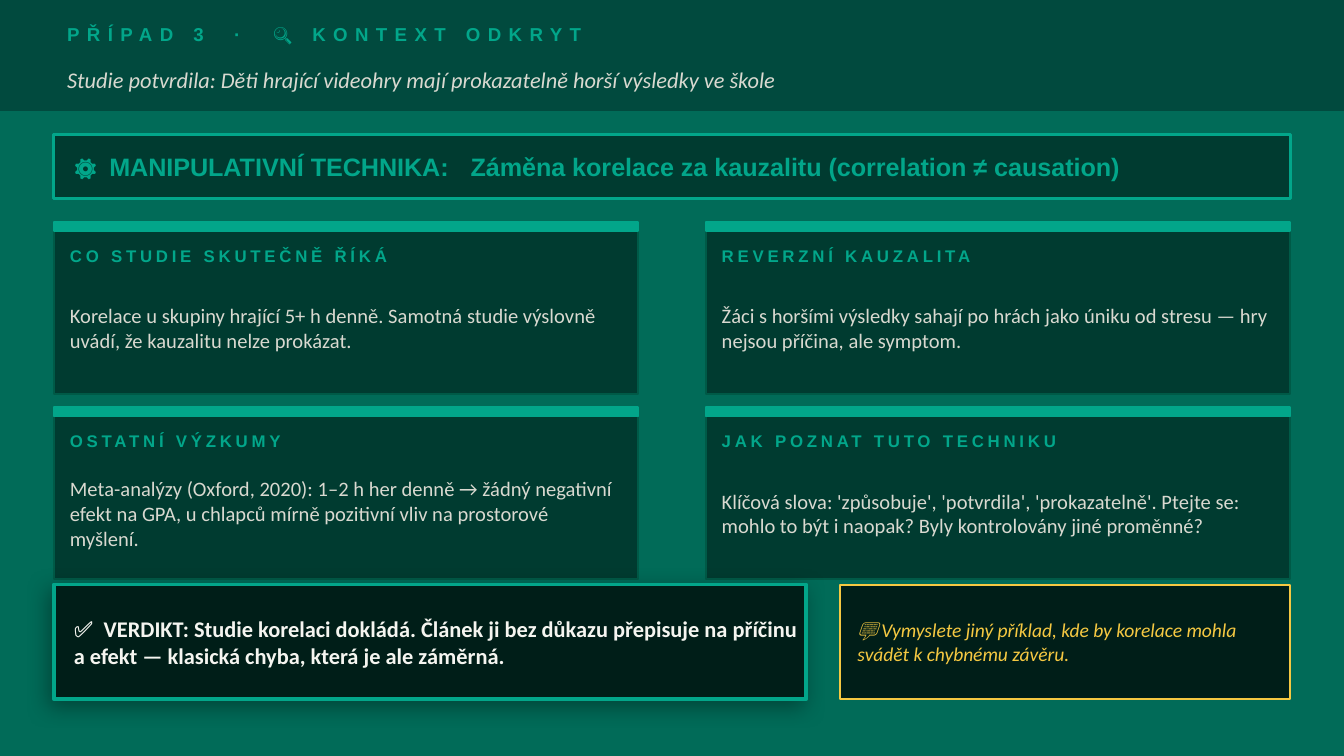
from dataclasses import dataclass
from typing import Optional

import pptx
import pptx.dml.color
import pptx.enum.shapes
import pptx.enum.text
import pptx.oxml
import pptx.oxml.ns
import pptx.util
from pptx.dml.color import RGBColor
from pptx.util import Pt

BACKGROUND = RGBColor(0x01, 0x6B, 0x58)
HEADER = RGBColor(0x01, 0x4A, 0x3E)
PANEL = RGBColor(0x00, 0x3B, 0x30)
PANEL_EDGE = RGBColor(0x00, 0x5A, 0x47)
DARK = RGBColor(0x00, 0x1E, 0x18)
ACCENT = RGBColor(0x02, 0xA6, 0x8A)
YELLOW = RGBColor(0xF5, 0xC8, 0x42)
BODY = RGBColor(0xD9, 0xD9, 0xD0)
WHITE = RGBColor(0xF5, 0xF5, 0xF0)

NS = pptx.oxml.ns.nsdecls("a")


@dataclass(frozen=True)
class Box:
    x: float
    y: float
    w: float
    h: float


@dataclass(frozen=True)
class Style:
    font: str
    size: float
    color: RGBColor
    bold: bool = False
    italic: bool = False
    spacing: int = 0


@dataclass(frozen=True)
class Card:
    title: str
    body: str


CASE = Style("Arial", 10, ACCENT, bold=True, spacing=4)
HEADLINE = Style("Calibri", 12, BODY, italic=True)
TECHNIQUE = Style("Arial", 13.5, ACCENT, bold=True)
CARD_TITLE = Style("Arial", 9, ACCENT, bold=True, spacing=2)
CARD_BODY = Style("Calibri", 11, BODY)
VERDICT = Style("Calibri", 12, WHITE, bold=True)
TASK = Style("Calibri", 10.5, YELLOW, italic=True)

CARDS = [
    Card("CO STUDIE SKUTEČNĚ ŘÍKÁ",
         "Korelace u skupiny hrající 5+ h denně. Samotná studie výslovně "
         "uvádí, že kauzalitu nelze prokázat."),
    Card("REVERZNÍ KAUZALITA",
         "Žáci s horšími výsledky sahají po hrách jako úniku od stresu — "
         "hry nejsou příčina, ale symptom."),
    Card("OSTATNÍ VÝZKUMY",
         "Meta-analýzy (Oxford, 2020): 1–2 h her denně → žádný negativní "
         "efekt na GPA, u chlapců mírně pozitivní vliv na prostorové myšlení."),
    Card("JAK POZNAT TUTO TECHNIKU",
         "Klíčová slova: 'způsobuje', 'potvrdila', 'prokazatelně'. Ptejte se: "
         "mohlo to být i naopak? Byly kontrolovány jiné proměnné?"),
]


def add_rect(s, box: Box, fill: RGBColor, line: Optional[RGBColor] = None,
             width: float = 1):
    sp = s.shapes.add_shape(pptx.enum.shapes.MSO_SHAPE.RECTANGLE,
                            Pt(box.x), Pt(box.y), Pt(box.w), Pt(box.h))
    sp.shadow.inherit = False
    sp.fill.solid()
    sp.fill.fore_color.rgb = fill
    sp.line.color.rgb = line or fill
    sp.line.width = Pt(width)
    return sp


def add_shadow(sp) -> None:
    """Soft black shadow falling to the lower left."""
    effects = sp._element.spPr.find(pptx.oxml.ns.qn("a:effectLst"))
    effects.append(pptx.oxml.parse_xml(
        f'<a:outerShdw {NS} blurRad="{Pt(12)}" dist="{Pt(4)}" dir="{135 * 60000}" '
        'algn="bl" rotWithShape="0"><a:srgbClr val="000000">'
        '<a:alpha val="35000"/></a:srgbClr></a:outerShdw>'))


def add_text(s, box: Box, text: str, style: Style,
             tabs: tuple[float, ...] = ()) -> None:
    sp = s.shapes.add_textbox(Pt(box.x), Pt(box.y), Pt(box.w), Pt(box.h))
    tf = sp.text_frame
    tf.word_wrap = True
    tf.vertical_anchor = pptx.enum.text.MSO_ANCHOR.MIDDLE
    tf.margin_left = tf.margin_top = tf.margin_right = tf.margin_bottom = 0
    p = tf.paragraphs[0]
    if tabs:
        stops = "".join(f'<a:tab pos="{Pt(t)}" algn="l"/>' for t in tabs)
        p._p.get_or_add_pPr().append(
            pptx.oxml.parse_xml(f"<a:tabLst {NS}>{stops}</a:tabLst>"))
    r = p.add_run()
    r.text = text
    r.font.name = style.font
    r.font.size = Pt(style.size)
    r.font.color.rgb = style.color
    r.font.bold = style.bold
    r.font.italic = style.italic
    if style.spacing:
        r._r.get_or_add_rPr().set("spc", str(style.spacing * 100))


def add_card(s, x: float, y: float, card: Card) -> None:
    w, inset = 313.2, 8.64
    add_rect(s, Box(x, y, w, 92.16), PANEL, PANEL_EDGE)
    add_rect(s, Box(x, y, w, 5.04), ACCENT)
    text_x, text_w = x + inset, w - 2 * inset
    add_text(s, Box(text_x, y + 8.64, text_w, 18.72), card.title, CARD_TITLE)
    add_text(s, Box(text_x, y + 28.8, text_w, 56.16), card.body, CARD_BODY)


def main() -> None:
    prs = pptx.Presentation()
    prs.slide_width, prs.slide_height = Pt(720), Pt(405)
    s = prs.slides.add_slide(prs.slide_layouts[6])
    s.background.fill.solid()
    s.background.fill.fore_color.rgb = BACKGROUND

    # Header band
    add_rect(s, Box(0, 0, 720, 59.04), HEADER)
    add_text(s, Box(36, 5.76, 648, 25.2), "PŘÍPAD 3\t·\t🔍 KONTEXT ODKRYT",
             CASE, tabs=(89.5, 110.5))
    add_text(s, Box(36, 30.24, 648, 25.2),
             "Studie potvrdila: Děti hrající videohry mají prokazatelně horší "
             "výsledky ve škole", HEADLINE)

    # Manipulation technique
    add_rect(s, Box(28.8, 72, 662.4, 34.56), PANEL, ACCENT, 1.5)
    add_text(s, Box(39.6, 72, 648, 34.56),
             "⚙️\tMANIPULATIVNÍ TECHNIKA:\tZáměna korelace za kauzalitu "
             "(correlation ≠ causation)", TECHNIQUE, tabs=(19, 212.5))

    # Two-by-two grid of cards
    for i, card in enumerate(CARDS):
        row, col = divmod(i, 2)
        add_card(s, 28.8 + col * 349.2, 118.8 + row * 99.36, card)

    # Verdict
    add_shadow(add_rect(s, Box(28.8, 313.2, 403.2, 61.2), DARK, ACCENT, 2))
    add_text(s, Box(39.6, 313.2, 388.8, 61.2),
             "✅\tVERDIKT: Studie korelaci dokládá. Článek ji bez důkazu "
             "přepisuje na příčinu a efekt — klasická chyba, která je ale "
             "záměrná.", VERDICT, tabs=(16,))

    # Task for the audience
    add_rect(s, Box(450, 313.2, 241.2, 61.2), DARK, YELLOW)
    add_text(s, Box(459.36, 313.2, 223.2, 61.2),
             "💬 Vymyslete jiný příklad, kde by korelace mohla svádět "
             "k chybnému závěru.", TASK)

    prs.save("out.pptx")


if __name__ == "__main__":
    main()
